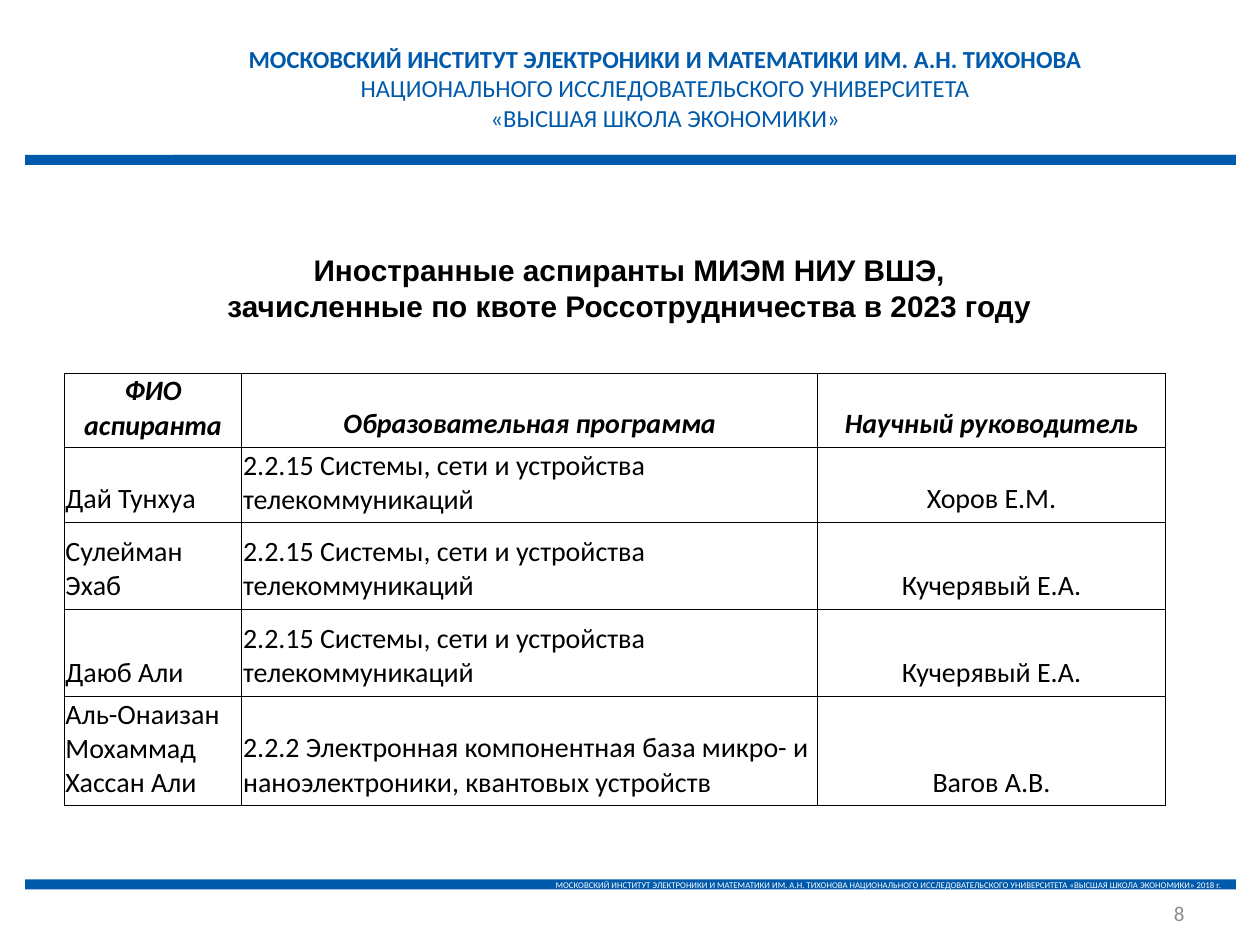
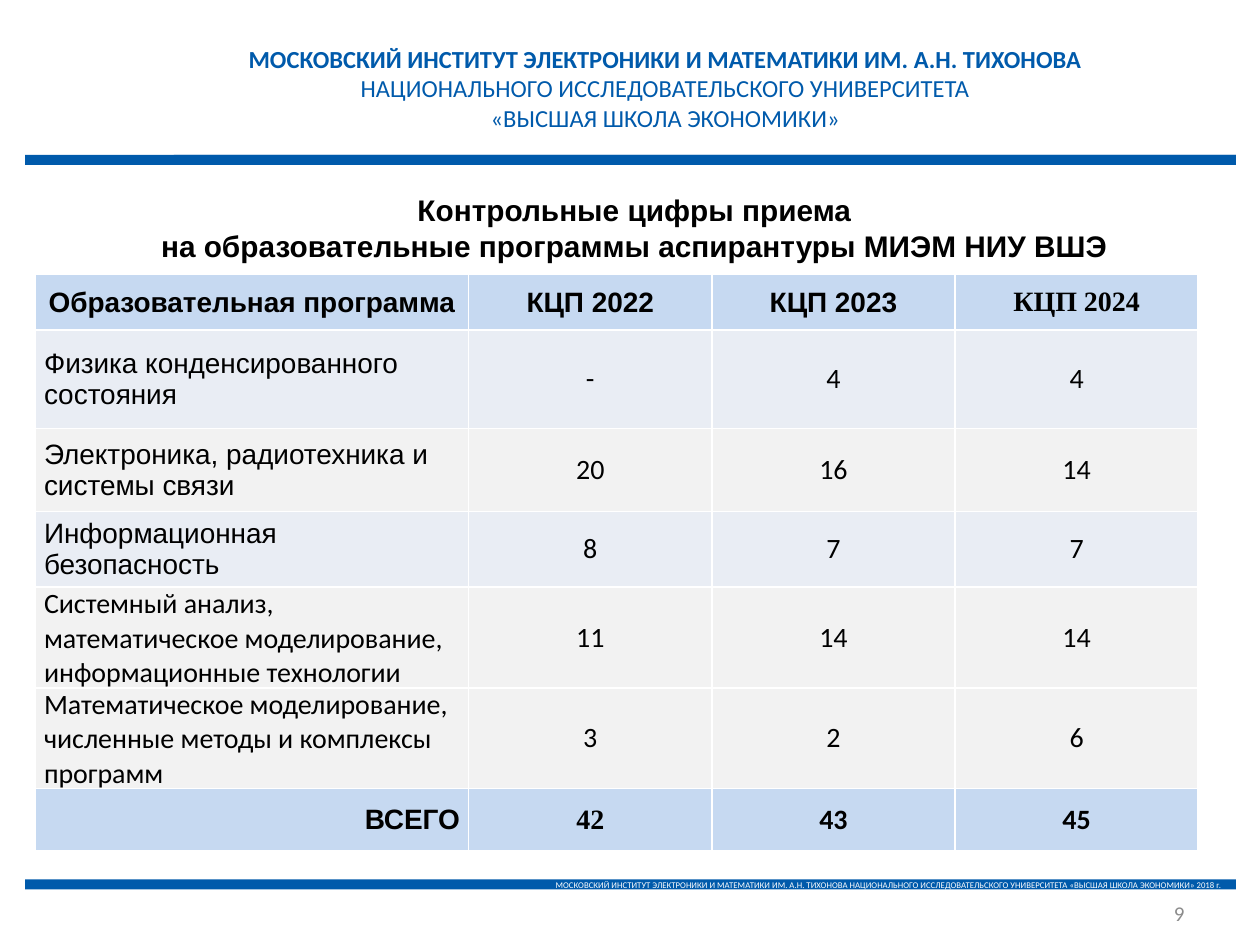
import dataclasses
import pptx
import pptx.dml.color
import pptx.enum.shapes
import pptx.enum.text
import pptx.oxml
import pptx.oxml.ns
import pptx.util

ALIGN = pptx.enum.text.PP_ALIGN
ANCHOR = pptx.enum.text.MSO_ANCHOR


@dataclasses.dataclass(frozen=True)
class Theme:
    blue: str = "005AAB"
    white: str = "FFFFFF"
    black: str = "000000"
    gray: str = "8C8C8C"
    head: str = "C6D9F1"
    cool: str = "E9EDF4"
    pale: str = "F2F2F2"
    sans: str = "Calibri"
    bold: str = "Arial"
    serif: str = "Times New Roman"
    tiny: int = 5
    small: int = 12
    brand: int = 14
    body: int = 16
    title: int = 17


T = Theme()

# The slide is a grid of 100 columns by 75 rows of square units.
COLS, ROWS = 100, 75
UNIT = pptx.util.Inches(10) // COLS

SCHOOL = [
    "МОСКОВСКИЙ ИНСТИТУТ ЭЛЕКТРОНИКИ И МАТЕМАТИКИ ИМ. А.Н. ТИХОНОВА",
    "НАЦИОНАЛЬНОГО ИССЛЕДОВАТЕЛЬСКОГО УНИВЕРСИТЕТА",
    "«ВЫСШАЯ ШКОЛА ЭКОНОМИКИ»",
]
NETS = "2.2.15 Системы, сети и устройства телекоммуникаций"
PEOPLE = [
    ["ФИО аспиранта", "Образовательная программа", "Научный руководитель"],
    ["Дай Тунхуа", NETS, "Хоров Е.М."],
    ["Сулейман Эхаб", NETS, "Кучерявый Е.А."],
    ["Даюб Али", NETS, "Кучерявый Е.А."],
    ["Аль-Онаизан Мохаммад Хассан Али",
     "2.2.2 Электронная компонентная база микро- и наноэлектроники, "
     "квантовых устройств", "Вагов А.В."],
]
QUOTAS = [
    ["Образовательная программа", "КЦП 2022", "КЦП 2023", "КЦП 2024"],
    ["Физика конденсированного состояния", "-", "4", "4"],
    ["Электроника, радиотехника и системы связи", "20", "16", "14"],
    ["Информационная безопасность", "8", "7", "7"],
    ["Системный анализ, математическое моделирование, "
     "информационные технологии", "11", "14", "14"],
    ["Математическое моделирование, численные методы и комплексы программ",
     "3", "2", "6"],
    ["ВСЕГО", "42", "43", "45"],
]


def units(*nums):
    return [round(num * UNIT) for num in nums]


def tint(code):
    return pptx.dml.color.RGBColor.from_string(code)


def style(para, size, face, color, align=ALIGN.CENTER, bold=False, slant=False):
    para.alignment = align
    for run in para.runs:
        font = run.font
        font.size, font.name = pptx.util.Pt(size), face
        font.bold, font.italic = bold, slant
        font.color.rgb = tint(color)


def label(slide, area, lines, *look, **more):
    """Add a text box and return its frame."""
    frame = slide.shapes.add_textbox(*units(*area)).text_frame
    frame.word_wrap = True
    frame.text = "\n".join(lines)
    for para in frame.paragraphs:
        style(para, *look, **more)
    return frame


def band(slide, left, top, width):
    """Add a thin blue bar."""
    kind = pptx.enum.shapes.MSO_SHAPE.RECTANGLE
    bar = slide.shapes.add_shape(kind, *units(left, top, width, 0.8))
    bar.shadow.inherit = False
    bar.fill.solid()
    bar.fill.fore_color.rgb = tint(T.blue)
    bar.line.fill.background()
    return bar


def frame_page(deck, number):
    """Add a slide with the header, the bands and the page number."""
    slide = deck.slides.add_slide(deck.slide_layouts[6])
    for left in (13.8, 2):
        band(slide, left, 12.3, 98.1 - left)
    frame = band(slide, 2, 69.8, 96.1).text_frame
    frame.text = " ".join(SCHOOL) + " 2018 г."
    frame.vertical_anchor = ANCHOR.MIDDLE
    style(frame.paragraphs[0], T.tiny, T.sans, T.white, ALIGN.RIGHT)

    frame = label(slide, (18.6, 3, 68.4, 8.1), SCHOOL, T.brand, T.sans, T.blue)
    for run in frame.paragraphs[0].runs:
        run.font.bold = True
    frame = label(slide, (71.7, 71.4, 23.3, 2.2), [str(number)],
                  T.small, T.sans, T.gray, ALIGN.RIGHT)
    frame.vertical_anchor = ANCHOR.MIDDLE
    return slide


def title(slide, left, top, lines):
    frame = label(slide, (left, top, 92.1, 6.7), lines,
                  T.title, T.bold, T.black, bold=True)
    frame.vertical_anchor = ANCHOR.MIDDLE
    frame.auto_size = pptx.enum.text.MSO_AUTO_SIZE.SHAPE_TO_FIT_TEXT


def edge(cell, color, width):
    """Draw all four borders of a cell."""
    props = cell._tc.get_or_add_tcPr()
    space = pptx.oxml.ns.nsdecls("a")
    for side in "LRTB":
        props.append(pptx.oxml.parse_xml(
            f'<a:ln{side} {space} w="{pptx.util.Pt(width)}"><a:solidFill>'
            f'<a:srgbClr val="{color}"/></a:solidFill></a:ln{side}>'))


def grid(slide, left, top, wides, highs, rows, paint):
    """Add a table; paint(cell, row, col) styles each filled cell."""
    area = units(left, top, sum(wides), sum(highs))
    table = slide.shapes.add_table(len(highs), len(wides), *area).table
    table.first_row = table.horz_banding = False
    for col, wide in zip(table.columns, units(*wides)):
        col.width = wide
    for row, high in zip(table.rows, units(*highs)):
        row.height = high
    for r, texts in enumerate(rows):
        for c, text in enumerate(texts):
            cell = table.cell(r, c)
            cell.text_frame.text = text
            paint(cell, r, c)


def pad(cell, left, top, right, base):
    (cell.margin_left, cell.margin_top,
     cell.margin_right, cell.margin_bottom) = units(left, top, right, base)


def paint_person(cell, r, c):
    top = r == 0
    edge(cell, T.black, 0.5)
    cell.fill.background()
    cell.vertical_anchor = ANCHOR.BOTTOM
    pad(cell, 0.1, 0.1, 0.1, 0.5)
    align = ALIGN.CENTER if top or c == 2 else ALIGN.LEFT
    style(cell.text_frame.paragraphs[0], T.body, T.sans, T.black, align,
          bold=top, slant=top)


def paint_quota(cell, r, c):
    last = len(QUOTAS) - 1
    strong = r in (0, last)
    edge(cell, T.white, 1)
    cell.fill.solid()
    fill = T.head if strong else T.cool if r in (1, 3) else T.pale
    cell.fill.fore_color.rgb = tint(fill)
    cell.vertical_anchor = ANCHOR.MIDDLE
    side = 0.7 if c < 2 else 0
    pad(cell, side, 0, side, 0)

    if (r, c) in ((0, 3), (last, 1)):
        face = T.serif
    elif r == 0 or c == 0 and r not in (4, 5):
        face = T.bold
    else:
        face = T.sans
    align = ALIGN.CENTER
    if c == 0 and r > 0:
        align = ALIGN.RIGHT if r == last else ALIGN.LEFT
    style(cell.text_frame.paragraphs[0], T.body, face, T.black, align,
          bold=strong)


def main():
    deck = pptx.Presentation()
    deck.slide_width, deck.slide_height = COLS * UNIT, ROWS * UNIT

    # Foreign students
    slide = frame_page(deck, 8)
    title(slide, 3.9, 19.5, ["Иностранные аспиранты МИЭМ НИУ ВШЭ,",
                             "зачисленные по квоте Россотрудничества в 2023 году"])
    grid(slide, 5.1, 29.6, [14.1, 45.7, 27.6], [5.9, 5.9, 6.9, 6.9, 8.7],
         PEOPLE, paint_person)

    # Admission quotas
    slide = frame_page(deck, 9)
    grid(slide, 2.8, 21.8, [34.4] + [19.3] * 3,
         [4.4, 7.8, 6.6, 6, 8, 8, 4.9], QUOTAS, paint_quota)
    title(slide, 4.3, 14.7, ["Контрольные цифры приема",
                             "на образовательные программы аспирантуры МИЭМ НИУ ВШЭ"])
    deck.save("out.pptx")


if __name__ == "__main__":
    main()
